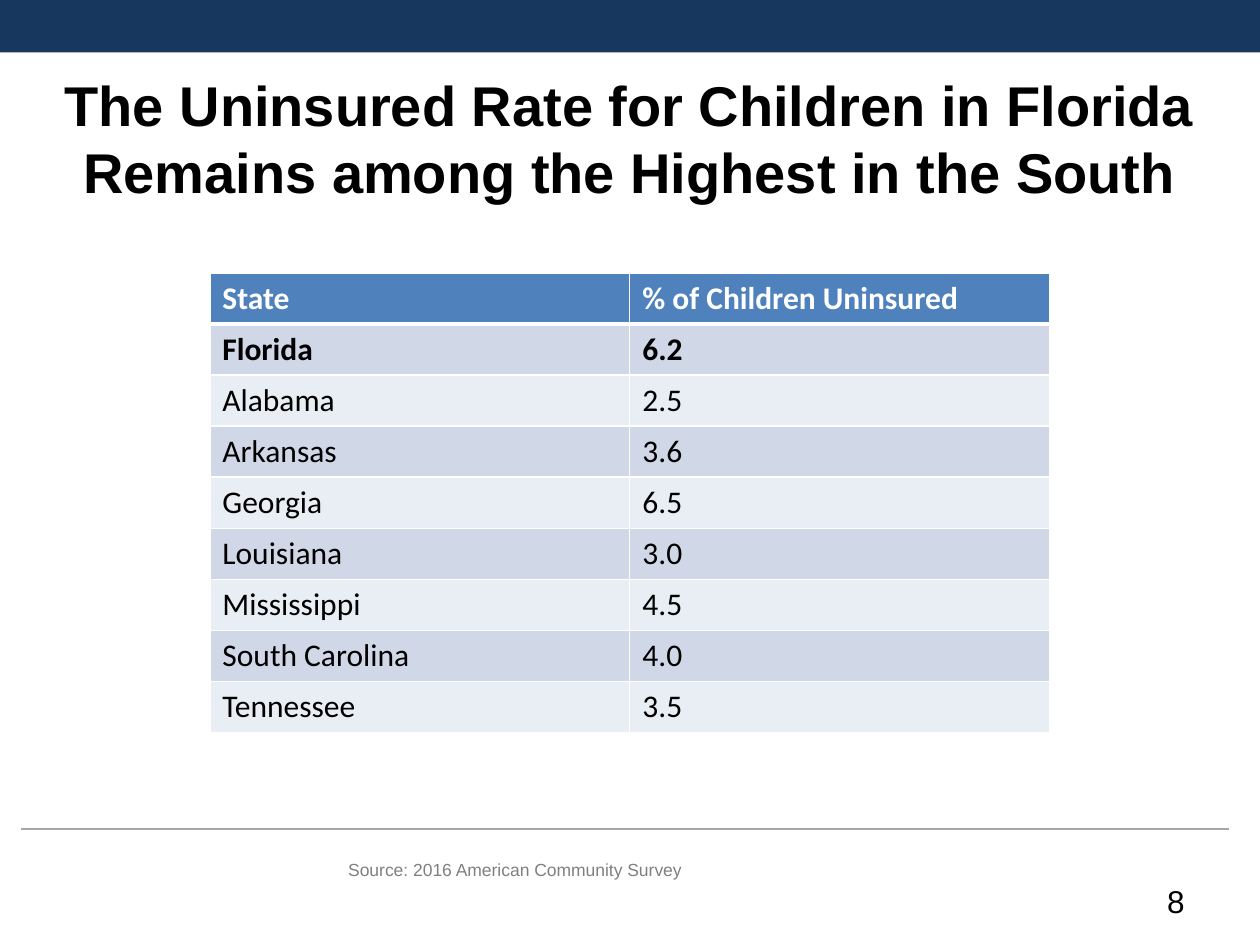
"""Build a slide with a table of uninsured rates for children in Southern states."""
from lxml.etree import SubElement
from pptx import Presentation
from pptx.dml.color import RGBColor as RGB
from pptx.enum.shapes import MSO_CONNECTOR as LINE, MSO_SHAPE as SHAPE
from pptx.enum.text import MSO_ANCHOR as ANCHOR, PP_ALIGN as ALIGN
from pptx.oxml import parse_xml
from pptx.oxml.ns import nsdecls, qn
from pptx.util import Cm, Pt

HUES = {
    "navy": "17375E", "rule": "A6A6A6", "black": "000000", "white": "FFFFFF",
    "gray": "808080", "head": "4F81BD", "dark": "D0D8E8", "light": "E9EDF4",
}
RATES = [
    ("State", "% of Children Uninsured"),
    ("Florida", "6.2"),
    ("Alabama", "2.5"),
    ("Arkansas", "3.6"),
    ("Georgia", "6.5"),
    ("Louisiana", "3.0"),
    ("Mississippi", "4.5"),
    ("South Carolina", "4.0"),
    ("Tennessee", "3.5"),
]


def write(frame, text, size, hue, face="Arial", bold=False, align=ALIGN.LEFT):
    para = frame.paragraphs[0]
    para.alignment = align
    run = para.add_run()
    run.text = text
    run.font.name = face
    run.font.size = Pt(size)
    run.font.bold = bold
    run.font.color.rgb = RGB.from_string(HUES[hue])


def edge(cell, side, width):
    return parse_xml(
        f'<a:{side} {nsdecls("a")} w="{Pt(width)}"><a:solidFill>'
        f'<a:srgbClr val="{HUES["white"]}"/></a:solidFill></a:{side}>'
    )


deck = Presentation()
deck.slide_width, deck.slide_height = Cm(25.4), Cm(19.05)
slide = deck.slides.add_slide(deck.slide_layouts[5])
shapes = slide.shapes

band = shapes.add_shape(SHAPE.RECTANGLE, 0, 0, deck.slide_width, Cm(1.06))
band.shadow.inherit = False
band.fill.solid()
band.fill.fore_color.rgb = RGB.from_string(HUES["navy"])
band.line.fill.background()

rule = shapes.add_connector(LINE.STRAIGHT, Cm(0.42), Cm(16.71), Cm(24.77), Cm(16.71))
rule.line.color.rgb = RGB.from_string(HUES["rule"])
rule.line.width = Pt(0.75)
SubElement(rule._element.spPr, qn("a:effectLst"))

title = shapes.title
title.left, title.top = Cm(0), Cm(1.35)
title.width, title.height = deck.slide_width, Cm(2.86)
title.text_frame.vertical_anchor = ANCHOR.MIDDLE
write(
    title.text_frame,
    "The Uninsured Rate for Children in Florida Remains among the Highest in the South",
    32, "black", bold=True, align=ALIGN.CENTER,
)

notes = [
    (6.77, 17.2, 8.06, "Source: 2016 American Community Survey", 10, "gray", ALIGN.LEFT),
    (18.2, 17.65, 5.93, "8", 18, "black", ALIGN.RIGHT),
]
for left, top, width, text, size, hue, align in notes:
    box = shapes.add_textbox(Cm(left), Cm(top), Cm(width), Cm(1.01))
    box.text_frame.word_wrap = True
    write(box.text_frame, text, size, hue, align=align)

table = shapes.add_table(len(RATES), 2, Cm(4.23), Cm(5.5), Cm(16.93), Cm(9.27)).table
for row, pair in enumerate(RATES):
    table.rows[row].height = Cm(1.03)
    fill = "head" if row == 0 else "dark" if row % 2 else "light"
    for col, text in enumerate(pair):
        cell = table.cell(row, col)
        cell.fill.solid()
        cell.fill.fore_color.rgb = RGB.from_string(HUES[fill])
        ink = "black" if row else "white"
        write(cell.text_frame, text, 18, ink, "Calibri", bold=row < 2)
        props = cell._tc.get_or_add_tcPr()
        widths = {"lnL": 1, "lnR": 1, "lnT": 3 if row == 1 else 1, "lnB": 1 if row else 3}
        for spot, (side, width) in enumerate(widths.items()):
            props.insert(spot, edge(cell, side, width))

deck.save("out.pptx")
